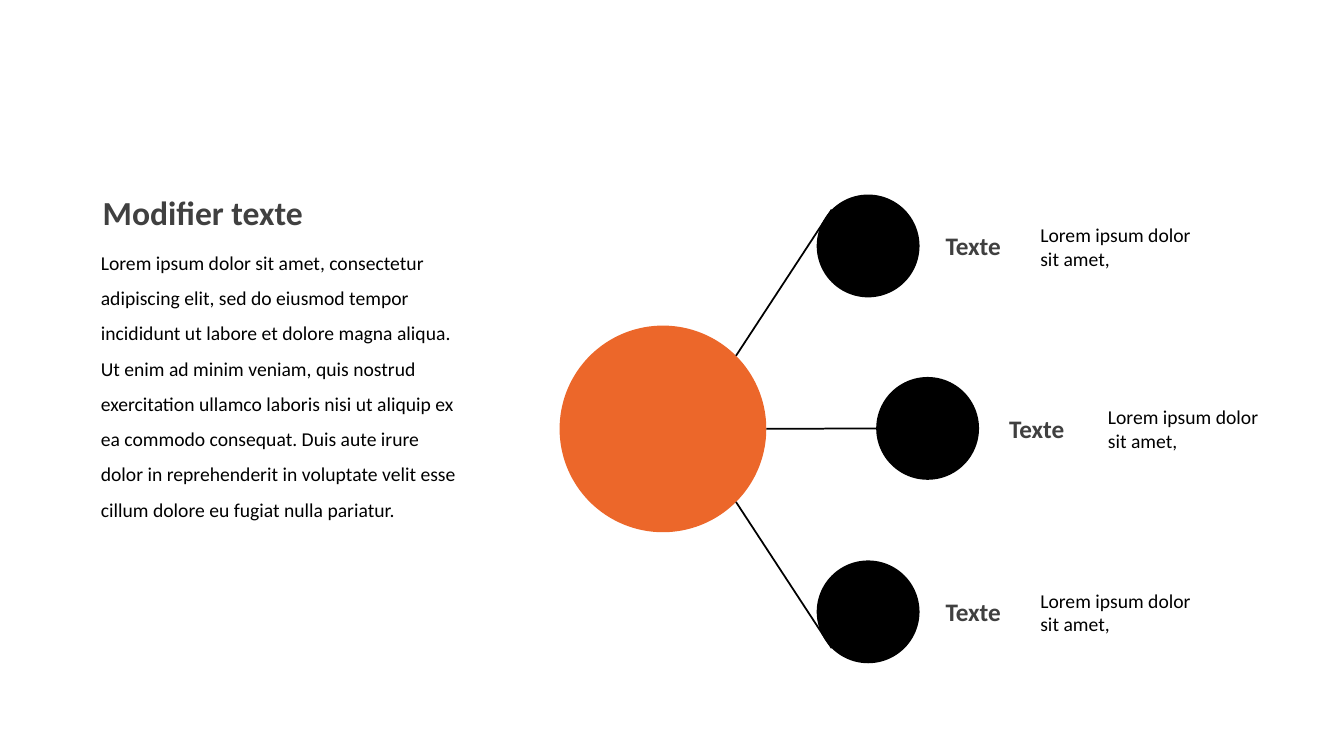
import math

from lxml import etree
from pptx import Presentation
from pptx import util as u
from pptx.dml.color import RGBColor
from pptx.enum import shapes, text
from pptx.oxml import ns

ORANGE = RGBColor(0xEC, 0x67, 0x2A)
BLACK = RGBColor(0, 0, 0)
GREY = RGBColor(0x40, 0x40, 0x40)
FONT = "Calibri"
HUB_SIZE = 2.05
NODE_SIZE = 1.02
INTRO = (
    "Lorem ipsum dolor sit amet, consectetur adipiscing elit, sed do eiusmod tempor "
    "incididunt ut labore et dolore magna aliqua. Ut enim ad minim veniam, quis nostrud "
    "exercitation ullamco laboris nisi ut aliquip ex ea commodo consequat. Duis aute irure "
    "dolor in reprehenderit in voluptate velit esse cillum dolore eu fugiat nulla pariatur."
)
BRANCHES = [
    (2.55, 0, -45, 1.18, 2.12, "Texte", "Lorem ipsum dolor sit amet,"),
    (3.14, 1.81, 0, 1.22, 2.2, "Texte", "Lorem ipsum dolor sit amet,"),
    (2.55, 3.63, 45, 1.18, 2.12, "Texte", "Lorem ipsum dolor sit amet,"),
]


def add_text(s, x, y, w, h, content, size, color, bold=False, spacing=None,
             inset=0.1, anchor=text.MSO_ANCHOR.TOP):
    """Add a wrapped text box with one formatted paragraph."""
    tf = s.shapes.add_textbox(*map(u.Inches, (x, y, w, h))).text_frame
    tf.word_wrap = True
    tf.vertical_anchor = anchor
    tf.margin_left = tf.margin_right = u.Inches(inset)
    tf.text = content
    p = tf.paragraphs[0]
    if spacing:
        p.line_spacing = spacing
    font = p.runs[0].font
    font.name, font.size, font.bold = FONT, u.Pt(size), bold
    font.color.rgb = color


def add_circle(s, x, y, size, color):
    """Add a plain filled circle."""
    sp = s.shapes.add_shape(shapes.MSO_SHAPE.OVAL, *map(u.Inches, (x, y, size, size)))
    sp.shadow.inherit = False
    sp.fill.solid()
    sp.fill.fore_color.rgb = color
    sp.line.fill.background()


def rim_point(x, y, size, angle):
    """Return the point on a circle's rim at an angle in degrees."""
    r, a = size / 2, math.radians(angle)
    return x + r + r * math.cos(a), y + r + r * math.sin(a)


def add_link(s, start, end):
    """Add a thin black line between two points."""
    cx = s.shapes.add_connector(shapes.MSO_CONNECTOR.STRAIGHT, *map(u.Inches, start + end))
    cx.line.color.rgb = BLACK
    cx.line.width = u.Pt(1.25)
    etree.SubElement(cx._element.spPr, ns.qn("a:effectLst"))


def add_intro(s, x, y, w):
    """Place the heading and its paragraph in a column."""
    add_text(s, x, y + 0.47, w, 2.89, INTRO, 14, BLACK, spacing=1.5, inset=0.08)
    add_text(s, x, y, w, 0.5, "Modifier texte", 24, GREY, bold=True)


def add_branches(s, x, y):
    """Place the hub with its three linked and labelled nodes."""
    hub_y = y + 1.3
    add_circle(s, x, hub_y, HUB_SIZE, ORANGE)
    for dx, dy, angle, label_dx, body_dx, label, body in BRANCHES:
        nx, ny = x + dx, y + dy
        add_circle(s, nx, ny, NODE_SIZE, BLACK)
        add_link(s, rim_point(nx, ny, NODE_SIZE, 180 - angle),
                 rim_point(x, hub_y, HUB_SIZE, angle))
        add_text(s, nx + label_dx, ny + 0.31, 0.94, 0.4, label, 18, GREY, bold=True)
        add_text(s, nx + body_dx, ny + 0.23, 1.73, 0.57, body, 14, BLACK,
                 anchor=text.MSO_ANCHOR.MIDDLE)


def main():
    """Build the slide and save it."""
    prs = Presentation()
    prs.slide_width, prs.slide_height = u.Inches(13.33), u.Inches(7.5)
    s = prs.slides.add_slide(prs.slide_layouts[6])
    add_intro(s, 0.92, 1.85, 3.78)
    add_branches(s, 5.55, 1.93)
    prs.save("out.pptx")


if __name__ == "__main__":
    main()
